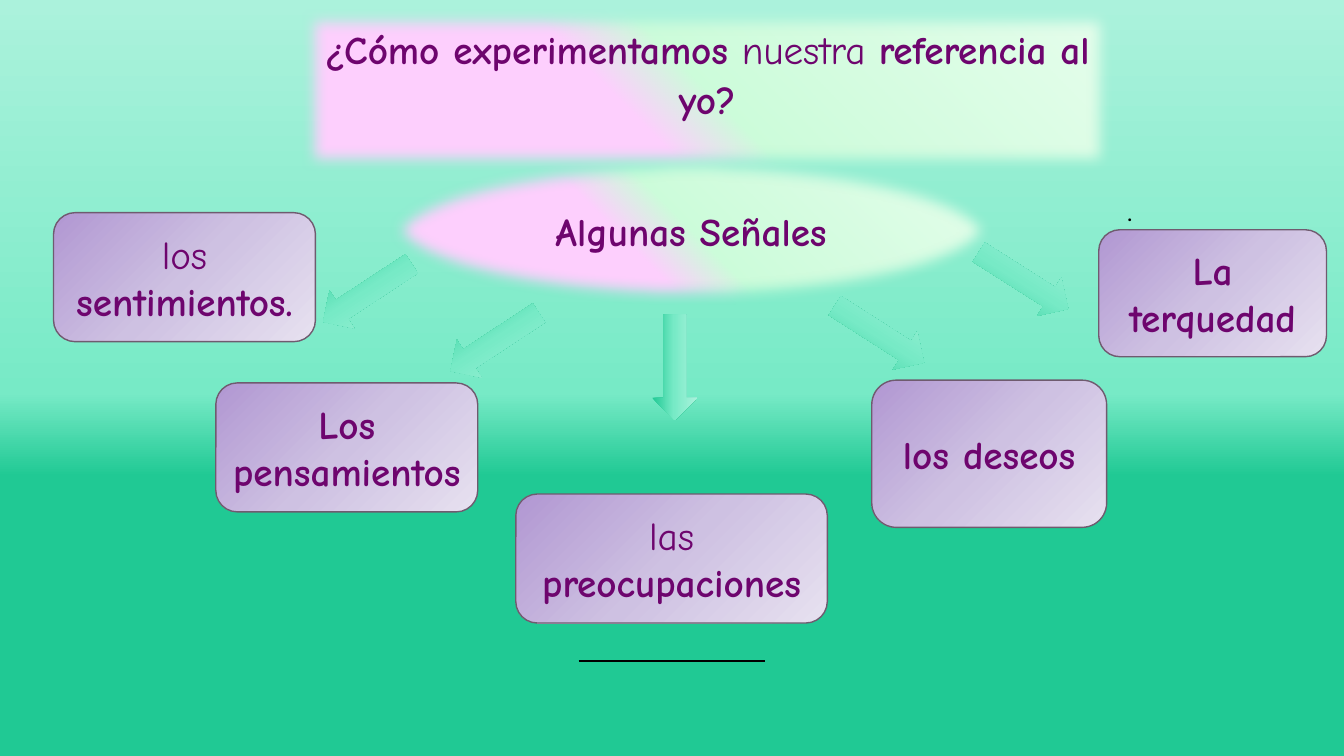
from lxml import etree
from pptx import Presentation
from pptx.dml.color import RGBColor
from pptx.enum.shapes import MSO_CONNECTOR, MSO_SHAPE
from pptx.enum.text import MSO_ANCHOR, PP_ALIGN
from pptx.oxml.ns import qn
from pptx.util import Cm, Pt

ROUNDED = MSO_SHAPE.ROUNDED_RECTANGLE
ELLIPSE = MSO_SHAPE.OVAL
ARROW = MSO_SHAPE.RIGHT_ARROW
STRAIGHT = MSO_CONNECTOR.STRAIGHT
MIDDLE = MSO_ANCHOR.MIDDLE
CENTER = PP_ALIGN.CENTER
LEFT = PP_ALIGN.LEFT

COLORS = {
    "text": "6E056E", "black": "000000",
    "box_line": "6F5B6F",
    "green": "20C994", "mint": "77EAC6", "pale_mint": "ABF2DC",
    "pink": "FDCFFD", "lime": "CCFCDA", "pale_lime": "E6FDEC",
    "violet": "B197D2", "lilac": "CEC1E2", "pale_lilac": "E7E1F0",
}
FONT = "Comic Neue"

BACKDROP = [(37, "green"), (48, "mint"), (100, "pale_mint")]
ARROW_FILL = [(0, "green"), (48, "mint"), (100, "pale_mint")]
ELLIPSE_FILL = [(40, "pink"), (50, "lime"), (100, "pale_lime")]
BOX_FILL = [(0, "violet"), (50, "lilac"), (100, "pale_lilac")]

SIGNALS = [
    (1.35, 5.36, 6.6, 3.25, [("los ", False), ("sentimientos.", True)]),
    (5.44, 9.65, 6.6, 3.25, [("Los pensamientos", True)]),
    (13, 12.45, 7.85, 3.25, [("las ", False), ("preocupaciones", True)]),
    (21.97, 9.58, 5.92, 3.71, [("los deseos", True)]),
    (27.69, 5.79, 5.74, 3.2, [("La terquedad", True)]),
]
ARROWS = [
    (7.92, 6.81, 146.7), (11.13, 8.05, 146.7), (15.67, 8.69, 90),
    (24.46, 6.5, 32.4), (20.83, 7.85, 32.6),
]


def color(name):
    return RGBColor.from_string(COLORS[name])


def paint_gradient(owner, stops, angle=None):
    owner.fill.solid()
    solid = owner.element.find(".//" + qn("a:solidFill"))
    gradient = etree.Element(qn("a:gradFill"), rotWithShape="1")
    stop_list = etree.SubElement(gradient, qn("a:gsLst"))
    for percent, name in stops:
        stop = etree.SubElement(stop_list, qn("a:gs"), pos=str(percent * 1000))
        etree.SubElement(stop, qn("a:srgbClr"), val=COLORS[name])
    if angle is None:
        radial = etree.SubElement(gradient, qn("a:path"), path="circle")
        etree.SubElement(radial, qn("a:fillToRect"), r="100000", b="100000")
    else:
        etree.SubElement(gradient, qn("a:lin"), ang=str(angle * 60000), scaled="0")
    solid.getparent().replace(solid, gradient)


def paint_background(page):
    page.background.fill.solid()
    backdrop = page.background
    backdrop_owner = type("Backdrop", (), {"fill": backdrop.fill, "element": page.element})
    paint_gradient(backdrop_owner, BACKDROP, 270)


def place(shape, left, top, width, height):
    shape.left, shape.top = Cm(left), Cm(top)
    shape.width, shape.height = Cm(width), Cm(height)


def write(shape, spans, size=28, font=FONT, tint="text", align=CENTER, spacing=1.0):
    frame = shape.text_frame
    frame.word_wrap = True
    frame.vertical_anchor = MIDDLE
    para = frame.paragraphs[0]
    para.alignment = align
    para.line_spacing = spacing
    para.space_before = Pt(0)
    for text, bold in spans:
        span = para.add_run()
        span.text = text
        span.font.size = Pt(size)
        span.font.name = font
        span.font.bold = bold
        span.font.color.rgb = color(tint)


def style_soft_ellipse(shape, spans):
    paint_gradient(shape, ELLIPSE_FILL, 315)
    shape.line.fill.background()
    shape.shadow.inherit = False
    effects = shape.element.spPr.find(qn("a:effectLst"))
    etree.SubElement(effects, qn("a:softEdge"), rad="127000")
    write(shape, spans, spacing=1.07)


def format_title(page):
    title = page.shapes.title
    place(title, 7.62, 0.25, 20.4, 4.04)
    geometry = etree.Element(qn("a:prstGeom"), prst="ellipse")
    etree.SubElement(geometry, qn("a:avLst"))
    title.element.spPr.find(qn("a:xfrm")).addnext(geometry)
    style_soft_ellipse(title, [("¿Cómo experimentamos ", True), ("nuestra ", False),
                               ("referencia al yo?", True)])
    title.text_frame.margin_top = Cm(0)
    title.text_frame.margin_bottom = Cm(0.9)


def add_subtitle(page):
    ellipse = page.shapes.add_shape(ELLIPSE, Cm(9.68), Cm(3.89), Cm(15.47), Cm(3.78))
    style_soft_ellipse(ellipse, [("Algunas Señales", True)])


def add_signal(page, left, top, width, height, spans):
    box = page.shapes.add_shape(ROUNDED, Cm(left), Cm(top), Cm(width), Cm(height))
    paint_gradient(box, BOX_FILL)
    box.line.color.rgb = color("box_line")
    box.line.width = Pt(1)
    box.shadow.inherit = False
    write(box, spans)


def add_arrow(page, left, top, rotation):
    arrow = page.shapes.add_shape(ARROW, Cm(left), Cm(top), Cm(2.67), Cm(1.14))
    arrow.rotation = rotation
    paint_gradient(arrow, ARROW_FILL, 270)
    arrow.line.fill.background()
    arrow.shadow.inherit = False


def add_rule(page):
    rule = page.shapes.add_connector(STRAIGHT, Cm(14.58), Cm(16.66), Cm(19.28), Cm(16.66))
    rule.line.color.rgb = color("black")
    rule.line.width = Pt(1)
    etree.SubElement(rule.element.spPr, qn("a:effectLst"))


def add_dot(page):
    dot = page.shapes.add_textbox(Cm(28.14), Cm(4.78), Cm(1.2), Cm(1.04))
    write(dot, [(".", False)], 18, "Roboto", "black", LEFT, 1.07)


def main():
    deck = Presentation()
    deck.slide_width, deck.slide_height = Cm(33.87), Cm(19.05)
    page = deck.slides.add_slide(deck.slide_layouts[5])
    paint_background(page)
    format_title(page)
    add_rule(page)
    add_dot(page)
    add_subtitle(page)
    for signal in SIGNALS:
        add_signal(page, *signal)
    for arrow in ARROWS:
        add_arrow(page, *arrow)
    deck.save("out.pptx")


if __name__ == "__main__":
    main()
